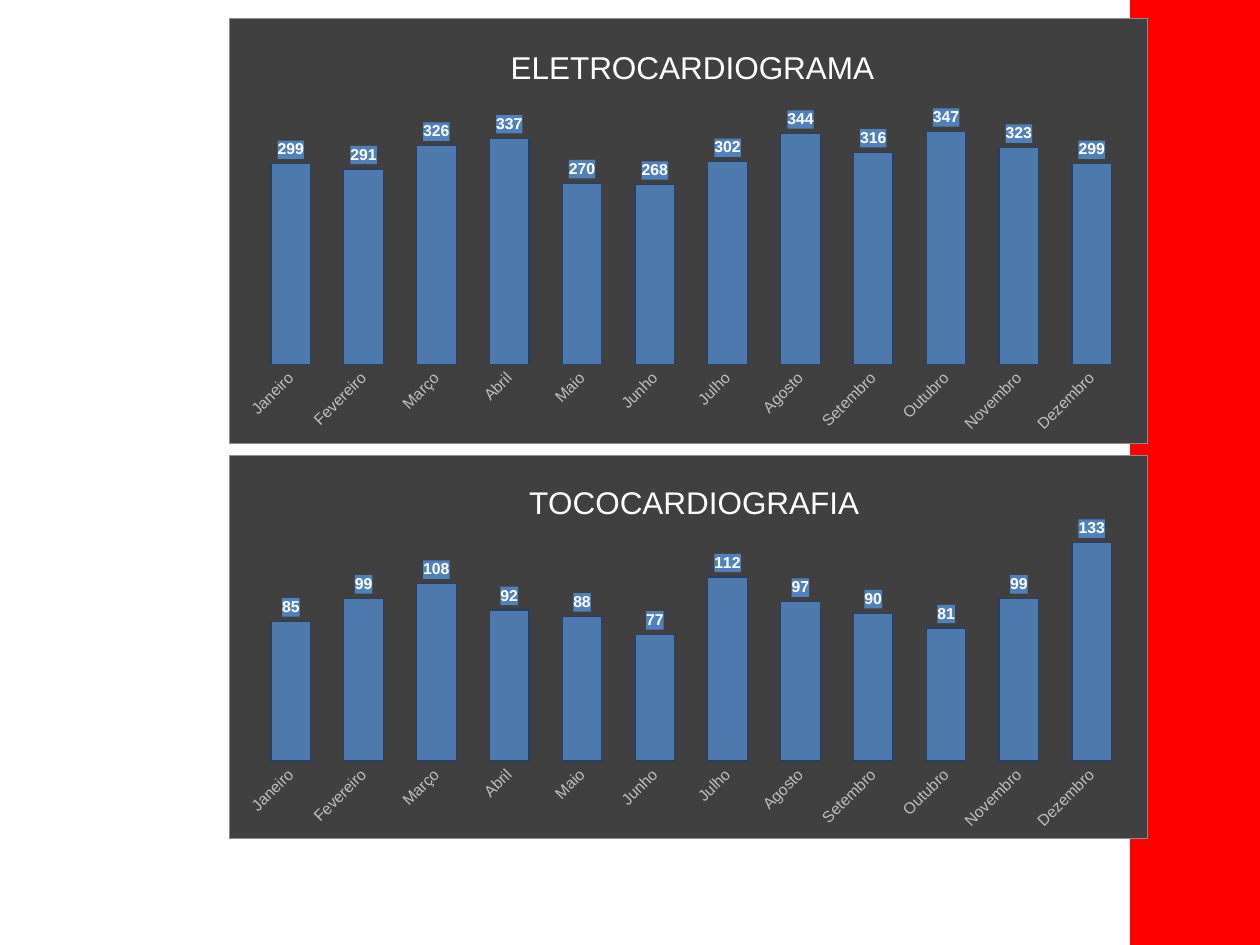
import pptx
import pptx.chart.data
import pptx.dml.color
import pptx.enum.chart
import pptx.enum.shapes
import pptx.oxml
import pptx.oxml.ns
import pptx.util
from pptx.util import Cm

RGB = pptx.dml.color.RGBColor
RED = RGB(0xFF, 0x00, 0x00)
WHITE = RGB(0xFF, 0xFF, 0xFF)
BLACK = RGB(0x00, 0x00, 0x00)
BLUE = RGB(0x4F, 0x81, 0xBD)
NAVY = RGB(0x25, 0x40, 0x61)
DARK = RGB(0x40, 0x40, 0x40)
GREY = RGB(0x8C, 0x8C, 0x8C)
SILVER = RGB(0xBF, 0xBF, 0xBF)

MONTHS = ["Janeiro", "Fevereiro", "Março", "Abril", "Maio", "Junho", "Julho",
          "Agosto", "Setembro", "Outubro", "Novembro", "Dezembro"]
ECG = [299, 291, 326, 337, 270, 268, 302, 344, 316, 347, 323, 299]
TOCO = [85, 99, 108, 92, 88, 77, 112, 97, 90, 81, 99, 133]


def xml(text):
    return pptx.oxml.parse_xml(text.replace(">", f' {pptx.oxml.ns.nsdecls("c", "a")}>', 1))


def fill_xml(fill, line=None):
    """Shape properties for chart parts that have no format object."""
    border = (f'<a:ln w="6350"><a:solidFill><a:srgbClr val="{line}"/></a:solidFill></a:ln>'
              if line else "")
    return xml(f'<c:spPr><a:solidFill><a:srgbClr val="{fill}"/></a:solidFill>{border}</c:spPr>')


def layout_xml(inner=False, **place):
    target = '<c:layoutTarget val="inner"/>' if inner else ""
    modes = "".join(f'<c:{k}Mode val="edge"/>' for k in "xy")
    values = "".join(f'<c:{k} val="{v}"/>' for k, v in place.items())
    return xml(f"<c:layout><c:manualLayout>{target}{modes}{values}</c:manualLayout></c:layout>")


def set_layout(parent, layout, before):
    """Replace any layout and put the new one in its schema position."""
    for old in parent.findall(pptx.oxml.ns.qn("c:layout")):
        parent.remove(old)
    if before is None:
        parent.insert(0, layout)
    else:
        parent.find(pptx.oxml.ns.qn(before)).addnext(layout)


def set_font(font, size, color, bold=False):
    font.name = "Arial"
    font.size = pptx.util.Pt(size)
    font.bold = bold
    font.color.rgb = color


def add_side_band(s):
    band = s.shapes.add_shape(pptx.enum.shapes.MSO_SHAPE.RECTANGLE,
                              Cm(22.81), 0, Cm(3.18), Cm(19.05))
    band.shadow.inherit = False
    band.fill.solid()
    band.fill.fore_color.rgb = RED
    band.line.color.rgb = RED
    band.line.width = pptx.util.Pt(2)


def add_month_chart(s, title, values, top, height, axis_max, title_x, plot_y, plot_h):
    data = pptx.chart.data.CategoryChartData()
    data.categories = MONTHS
    data.add_series("Series 1", values)
    chart = s.shapes.add_chart(pptx.enum.chart.XL_CHART_TYPE.COLUMN_CLUSTERED,
                               Cm(4.62), top, Cm(18.52), height, data).chart
    set_font(chart.font, 10, BLACK)
    chart.has_legend = False
    chart.element.chart.addnext(fill_xml(DARK, GREY)) if hasattr(chart, "element") \
        else chart._chartSpace.chart.addnext(fill_xml(DARK, GREY))

    # Title
    chart.has_title = True
    p = chart.chart_title.text_frame.paragraphs[0]
    p.text = title
    set_font(p.font, 18, WHITE)
    chart.chart_title.include_in_layout = False
    set_layout(chart.chart_title._element, layout_xml(x=title_x, y=0.055), "c:tx")

    # Axes
    axis = chart.category_axis
    axis.major_tick_mark = pptx.enum.chart.XL_TICK_MARK.NONE
    axis.format.line.fill.background()
    set_font(axis.tick_labels.font, 9, SILVER)
    body = axis._element.find(".//" + pptx.oxml.ns.qn("a:bodyPr"))
    body.set("rot", "-2700000")
    body.set("vert", "horz")
    value_axis = chart.value_axis
    value_axis.visible = False
    value_axis.has_major_gridlines = False
    value_axis.minimum_scale = 0
    value_axis.maximum_scale = axis_max

    # Columns
    plot = chart.plots[0]
    plot.gap_width = 84
    plot.vary_by_categories = False
    series = plot.series[0]
    series.format.fill.solid()
    series.format.fill.fore_color.rgb = BLUE
    color = series._element.find(".//" + pptx.oxml.ns.qn("a:srgbClr"))
    color.append(xml('<a:alpha val="88000"></a:alpha>'))
    series.format.line.color.rgb = NAVY
    series.format.line.width = pptx.util.Pt(0.75)

    # Data labels
    labels = series.data_labels
    labels.show_value = True
    labels.position = pptx.enum.chart.XL_LABEL_POSITION.OUTSIDE_END
    set_font(labels.font, 9, WHITE, bold=True)
    labels._element.find(pptx.oxml.ns.qn("c:txPr")).addprevious(fill_xml(BLUE))

    plot_area = chart._chartSpace.chart.plotArea
    set_layout(plot_area, layout_xml(True, x=0.027, y=plot_y, w=0.952, h=plot_h), None)


def main():
    prs = pptx.Presentation()
    prs.slide_width, prs.slide_height = Cm(25.4), Cm(19.05)
    s = prs.slides.add_slide(prs.slide_layouts[6])
    add_side_band(s)
    add_month_chart(s, "ELETROCARDIOGRAMA", ECG, Cm(0.36), Cm(8.59), 400, 0.3, 0.183, 0.631)
    add_month_chart(s, "TOCOCARDIOGRAFIA", TOCO, Cm(9.17), Cm(7.75), 140, 0.32, 0.198, 0.599)
    prs.save("out.pptx")


if __name__ == "__main__":
    main()
